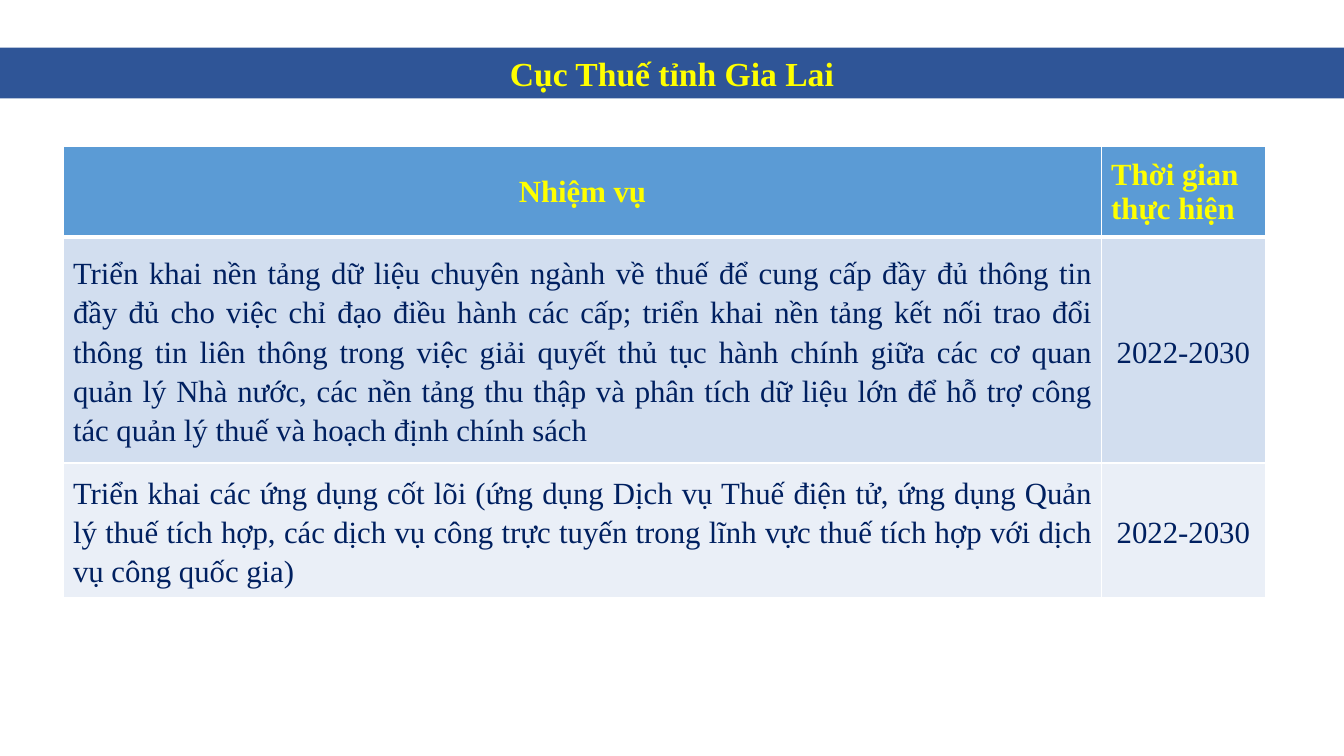
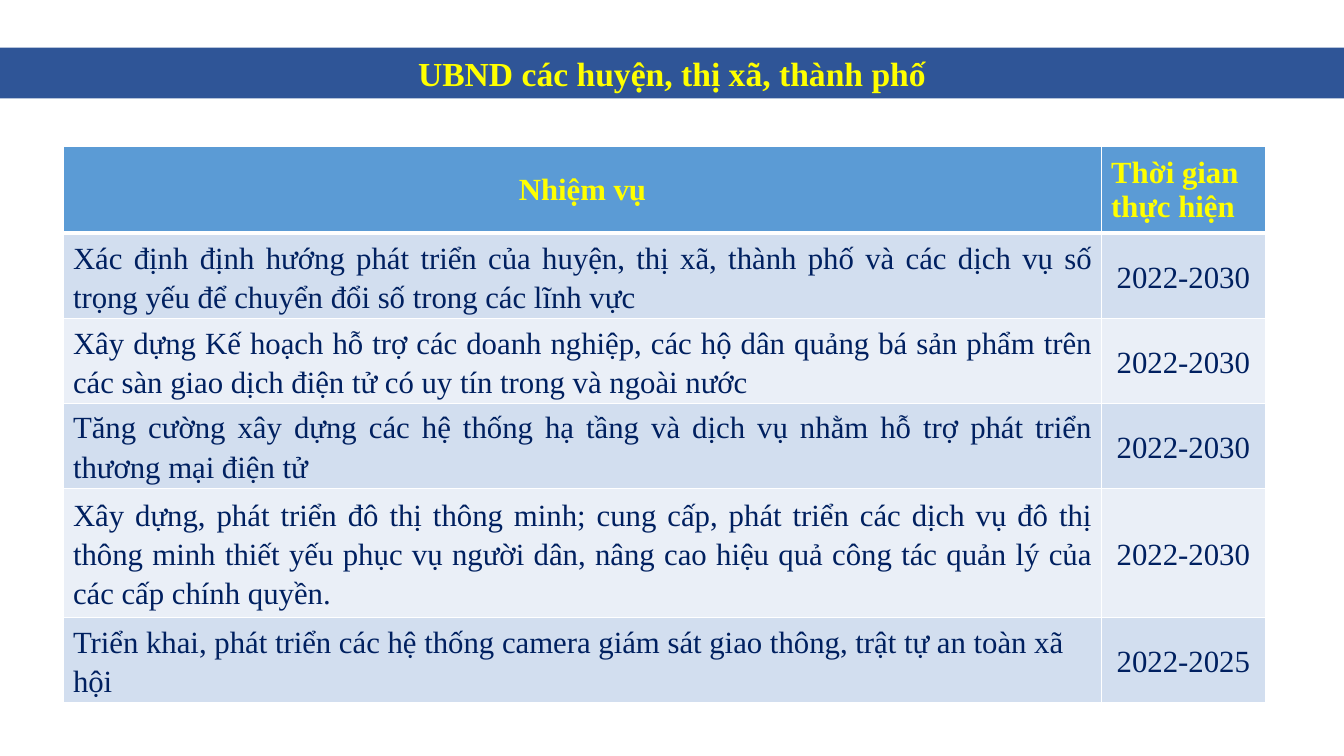
"""Build two slides that list digital transformation tasks and their periods."""
from typing import NamedTuple

from lxml import etree
from pptx import Presentation
from pptx.dml.color import RGBColor
from pptx.enum import text as t
from pptx.oxml import ns
from pptx.util import Cm, Pt

ALIGN = t.PP_ALIGN


class Task(NamedTuple):
    content: str
    period: str
    height: float
    align: ALIGN = ALIGN.JUSTIFY


def rgb(value):
    return RGBColor.from_string(value)


class Deck:
    FONT = "Times New Roman"
    BAND, HEADER, STRIPES = "2F5597", "5B9BD5", ("D2DEEF", "EAEFF7")
    ACCENT, INK, RULE = "FFFF00", "002060", "FFFFFF"
    TITLE_SIZE, TABLE_SIZE = 24, 22
    WIDTH, HEIGHT = 33.87, 19.05
    COLUMNS = (26.14, 4.14)
    HEADINGS = (("Nhiệm vụ", ALIGN.CENTER), ("Thời gian thực hiện", ALIGN.LEFT))

    def __init__(self):
        self.deck = Presentation()
        self.deck.slide_width, self.deck.slide_height = Cm(self.WIDTH), Cm(self.HEIGHT)
        self.slide = None

    def add_slide(self, title):
        self.slide = self.deck.slides.add_slide(self.deck.slide_layouts[5])
        band = self.slide.shapes.title
        band.left, band.top, band.width, band.height = Cm(0), Cm(1.2), Cm(self.WIDTH), Cm(1.28)
        band.fill.solid()
        band.fill.fore_color.rgb = rgb(self.BAND)
        frame = band.text_frame
        frame.auto_size = t.MSO_AUTO_SIZE.NONE
        frame.vertical_anchor = t.MSO_ANCHOR.MIDDLE
        frame.text = title
        self.style(frame.paragraphs[0], self.TITLE_SIZE, self.ACCENT, True, ALIGN.CENTER)

    def style(self, paragraph, size, color, bold, align):
        paragraph.alignment = align
        font = paragraph.font
        font.name, font.size, font.bold = self.FONT, Pt(size), bold
        font.color.rgb = rgb(color)

    def add_tasks(self, header_height, tasks):
        heights = [header_height] + [task.height for task in tasks]
        table = self.slide.shapes.add_table(
            len(heights), len(self.COLUMNS), Cm(1.61), Cm(3.7),
            Cm(sum(self.COLUMNS)), Cm(sum(heights))).table
        for column, width in zip(table.columns, self.COLUMNS):
            column.width = Cm(width)
        for row, height in zip(table.rows, heights):
            row.height = Cm(height)
        for column, (heading, align) in enumerate(self.HEADINGS):
            self.fill_cell(table.cell(0, column), heading, self.HEADER,
                           self.ACCENT, True, align, bottom=3)
        for row, task in enumerate(tasks, 1):
            stripe = self.STRIPES[(row - 1) % 2]
            entries = ((task.content, task.align, 0.23), (task.period, ALIGN.CENTER, 0))
            for column, (entry, align, indent) in enumerate(entries):
                cell = table.cell(row, column)
                cell.margin_left = cell.margin_right = Cm(indent)
                cell.margin_top = cell.margin_bottom = 0
                self.fill_cell(cell, entry, stripe, self.INK, False, align,
                               top=3 if row == 1 else 1)
                cell.text_frame.paragraphs[0].line_spacing = 1.15

    def fill_cell(self, cell, entry, fill, color, bold, align, top=1, bottom=1):
        cell.text = entry
        cell.vertical_anchor = t.MSO_ANCHOR.MIDDLE
        cell.fill.solid()
        cell.fill.fore_color.rgb = rgb(fill)
        self.style(cell.text_frame.paragraphs[0], self.TABLE_SIZE, color, bold, align)
        properties = cell._tc.get_or_add_tcPr()
        for place, (side, width) in enumerate(zip("LRTB", (1, 1, top, bottom))):
            border = etree.Element(ns.qn(f"a:ln{side}"), w=str(Pt(width)))
            solid = etree.SubElement(border, ns.qn("a:solidFill"))
            etree.SubElement(solid, ns.qn("a:srgbClr"), val=self.RULE)
            properties.insert(place, border)

    def save(self):
        self.deck.save("out.pptx")


def main():
    deck = Deck()
    deck.add_slide("Cục Thuế tỉnh Gia Lai")
    deck.add_tasks(2.28, [
        Task("Triển khai nền tảng dữ liệu chuyên ngành về thuế để cung cấp đầy đủ thông tin "
             "đầy đủ cho việc chỉ đạo điều hành các cấp; triển khai nền tảng kết nối trao đổi "
             "thông tin liên thông trong việc giải quyết thủ tục hành chính giữa các cơ quan "
             "quản lý Nhà nước, các nền tảng thu thập và phân tích dữ liệu lớn để hỗ trợ công "
             "tác quản lý thuế và hoạch định chính sách", "2022-2030", 5.69),
        Task("Triển khai các ứng dụng cốt lõi (ứng dụng Dịch vụ Thuế điện tử, ứng dụng Quản "
             "lý thuế tích hợp, các dịch vụ công trực tuyến trong lĩnh vực thuế tích hợp với "
             "dịch vụ công quốc gia)", "2022-2030", 3.39),
    ])
    deck.add_slide("UBND các huyện, thị xã, thành phố")
    deck.add_tasks(2.18, [
        Task("Xác định định hướng phát triển của huyện, thị xã, thành phố và các dịch vụ số "
             "trọng yếu để chuyển đổi số trong các lĩnh vực", "2022-2030", 2.14),
        Task("Xây dựng Kế hoạch hỗ trợ các doanh nghiệp, các hộ dân quảng bá sản phẩm trên "
             "các sàn giao dịch điện tử có uy tín trong và ngoài nước", "2022-2030", 2.14),
        Task("Tăng cường xây dựng các hệ thống hạ tầng và dịch vụ nhằm hỗ trợ phát triển "
             "thương mại điện tử", "2022-2030", 2.14),
        Task("Xây dựng, phát triển đô thị thông minh; cung cấp, phát triển các dịch vụ đô thị "
             "thông minh thiết yếu phục vụ người dân, nâng cao hiệu quả công tác quản lý của "
             "các cấp chính quyền.", "2022-2030", 3.26),
        Task("Triển khai, phát triển các hệ thống camera giám sát giao thông, trật tự an toàn "
             "xã hội", "2022-2025", 2.14, ALIGN.LEFT),
    ])
    deck.save()


if __name__ == "__main__":
    main()
